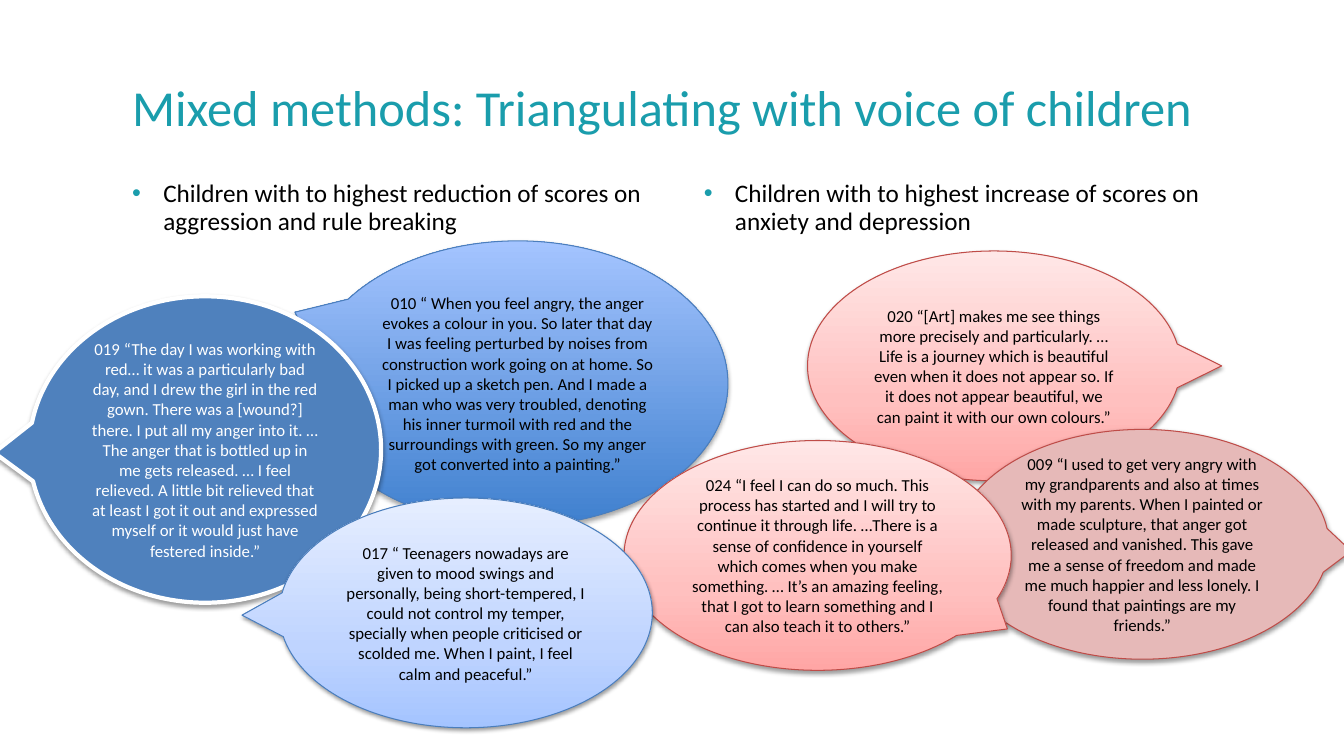
from lxml.etree import SubElement as Sub
from pptx import Presentation
from pptx.dml.color import RGBColor as Rgb
from pptx.enum.shapes import MSO_SHAPE as Kind
from pptx.enum.text import MSO_ANCHOR as Anchor, PP_ALIGN as Align
from pptx.oxml.ns import qn
from pptx.util import Pt

SCALE = 9144
TEAL, BLACK, WHITE = "1A9DAC", "000000", "FFFFFF"
NAVY, RED = "4B7EBC", "BF4C48"
DEEP = [(0, "3F80CE"), (100, "A4C4FF")]
PALE = [(0, "A4C4FF"), (35, "BFD4FF"), (100, "E6EEFF")]
PINK = [(0, "FFA6A5"), (35, "FFC0BF"), (100, "FFE7E7")]


def px(*nums):
    return [n * SCALE for n in nums]


def color(code):
    return Rgb.from_string(code)


def apply(item, style):
    for name, value in style.items():
        setattr(item, name, value)


def tint(parent, code):
    return Sub(parent, qn("a:srgbClr"), val=code)


class Page:
    face = "Calibri"

    def __init__(self, deck):
        self.slide = deck.slides.add_slide(deck.slide_layouts[6])

    def label(self, para, words, size, code):
        run = para.add_run()
        run.text = words
        apply(run.font, {"name": self.face, "size": Pt(size)})
        run.font.color.rgb = color(code)

    def block(self, box, words, size, code):
        frame = self.slide.shapes.add_textbox(*px(*box)).text_frame
        apply(frame, {"word_wrap": True, "margin_left": 0, "margin_right": 0,
                      "margin_top": 0, "margin_bottom": 0,
                      "vertical_anchor": Anchor.TOP})
        para = frame.paragraphs[0]
        self.label(para, words, size, code)
        return para

    def bullet(self, box, words):
        para = self.block(box, words, 18, BLACK)
        props = para._p.get_or_add_pPr()
        indent, = px(31)
        props.set("marL", str(indent))
        props.set("indent", str(-indent))
        tint(Sub(props, qn("a:buClr")), TEAL)
        Sub(props, qn("a:buFont"), typeface="Arial")
        Sub(props, qn("a:buChar"), char="•")
        para.line_spacing = Pt(20)

    def paint(self, shape, fill):
        if isinstance(fill, str):
            shape.fill.solid()
            shape.fill.fore_color.rgb = color(fill)
            return
        shape.fill.gradient()
        shape.fill.gradient_angle = 90
        stops = shape._element.spPr.find(".//" + qn("a:gsLst"))
        for stop in list(stops):
            stops.remove(stop)
        for place, code in fill:
            tint(Sub(stops, qn("a:gs"), pos=str(place * 1000)), code)

    def shade(self, shape, alpha, drop):
        shape.shadow.inherit = False
        effects = shape._element.spPr.find(qn("a:effectLst"))
        outer = Sub(effects, qn("a:outerShdw"), blurRad=str(Pt(3.1)),
                    dist=str(Pt(drop)), dir="5400000", rotWithShape="0")
        Sub(tint(outer, BLACK), qn("a:alpha"), val=str(alpha * 1000))

    def bubble(self, box, tip, fill, edge, words, ink=BLACK, width=0.75,
               alpha=38, drop=1.6):
        shape = self.slide.shapes.add_shape(Kind.OVAL_CALLOUT, *px(*box))
        shape.adjustments[0], shape.adjustments[1] = tip
        self.paint(shape, fill)
        shape.line.color.rgb = color(edge)
        shape.line.width = Pt(width)
        self.shade(shape, alpha, drop)
        frame = shape.text_frame
        apply(frame, {"word_wrap": True, "vertical_anchor": Anchor.MIDDLE})
        para = frame.paragraphs[0]
        para.alignment = Align.CENTER
        self.label(para, words, 12, ink)


def main():
    deck = Presentation()
    deck.slide_width, deck.slide_height = px(1333, 750)
    page = Page(deck)
    page.block((131, 76, 1150, 102),
               "Mixed methods: Triangulating with voice of children", 36, TEAL)
    heads = ["Children with to highest reduction of scores on aggression and rule breaking",
             "Children with to highest increase of scores on anxiety and depression"]
    for col, head in enumerate(heads):
        page.bullet((131 + col * 567, 178, 535, 496), head)

    page.bubble((305, 239, 417, 283), (-0.53, -0.25), DEEP, NAVY,
                "010 “ When you feel angry, the anger evokes a colour in you. "
                "So later that day I was feeling perturbed by noises from "
                "construction work going on at home. So I picked up a sketch pen. "
                "And I made a man who was very troubled, denoting his inner turmoil "
                "with red and the surroundings with green. So my anger got "
                "converted into a painting.”", alpha=35, drop=1.8)
    page.bubble((801, 249, 370, 228), (0.61, 0), PINK, RED,
                "020 “[Art] makes me see things more precisely and particularly. … "
                "Life is a journey which is beautiful even when it does not appear "
                "so. If it does not appear beautiful, we can paint it with our "
                "own colours.”")
    page.bubble((948, 426, 370, 228), (0.56, 0.03), "E6B9B8", RED,
                "009 “I used to get very angry with my grandparents and also at "
                "times with my parents. When I painted or made sculpture, that "
                "anger got released and vanished. This gave me a sense of freedom "
                "and made me much happier and less lonely. I found that paintings "
                "are my friends.”")
    page.bubble((619, 437, 384, 228), (0.49, 0.32), PINK, RED,
                "024 “I feel I can do so much. This process has started and I will "
                "try to continue it through life. …There is a sense of "
                "confidence in yourself which comes when you make something. … "
                "It’s an amazing feeling, that I got to learn something and I can "
                "also teach it to others.”")
    page.bubble((29, 294, 349, 304), (-0.6, 0.01), "4F81BD", WHITE,
                "019 “The day I was working with red… it was a particularly bad "
                "day, and I drew the girl in the red gown. There was "
                "a [wound?] there. I put all my anger into it. … The anger that is "
                "bottled up in me gets released. … I feel relieved. A little bit "
                "relieved that at least I got it out and expressed myself or it "
                "would just have festered inside.”", ink=WHITE, width=3)
    page.bubble((277, 494, 370, 228), (-0.6, 0.01), PALE, NAVY,
                "017 “ Teenagers nowadays are given to mood swings and personally, "
                "being short-tempered, I could not control my "
                "temper, specially when people criticised or scolded me. When I "
                "paint, I feel calm and peaceful.”")
    deck.save("out.pptx")


if __name__ == "__main__":
    main()
